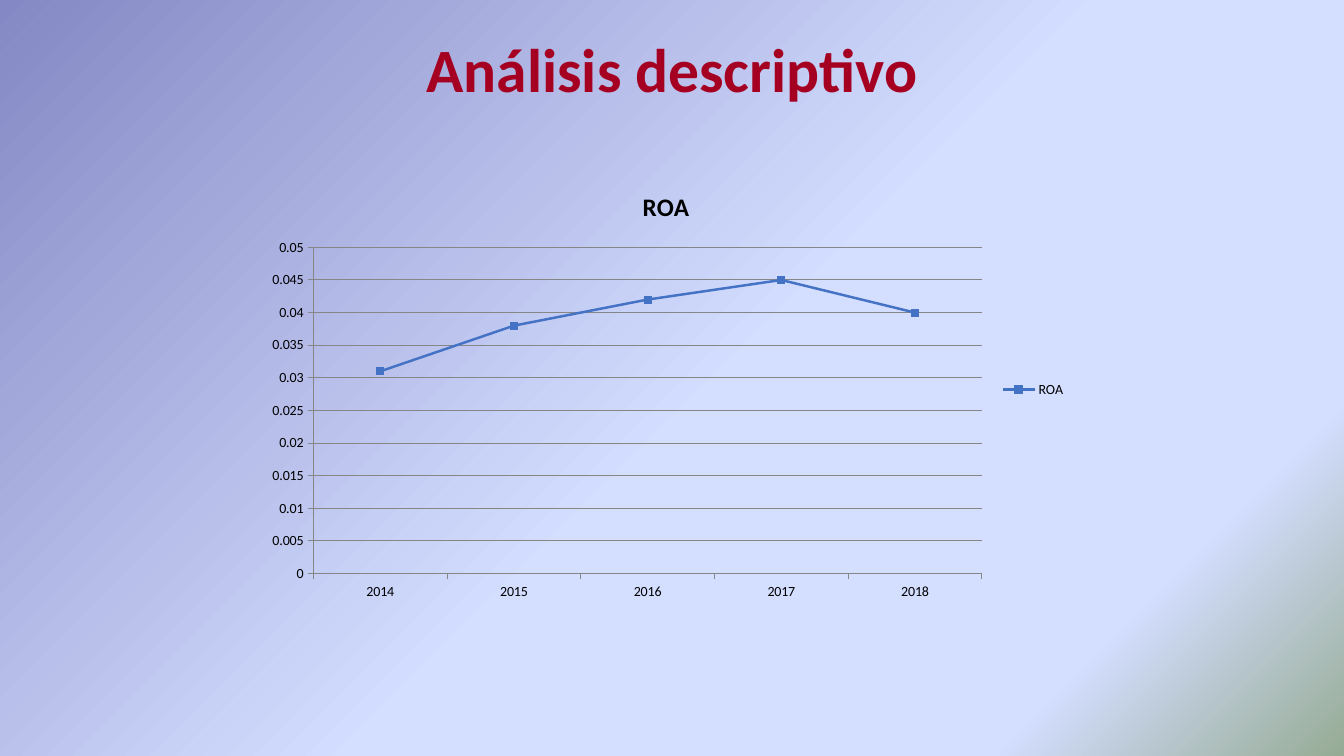
from dataclasses import dataclass

from lxml.etree import SubElement
from pptx import Presentation
from pptx.chart.data import CategoryChartData
from pptx.dml.color import RGBColor
from pptx.enum.chart import XL_CHART_TYPE as ChartType
from pptx.enum.chart import XL_LEGEND_POSITION as LegendPosition
from pptx.enum.chart import XL_MARKER_STYLE as MarkerStyle
from pptx.enum.chart import XL_TICK_MARK as TickMark
from pptx.enum.text import MSO_ANCHOR as Anchor
from pptx.enum.text import PP_ALIGN as Align
from pptx.oxml.ns import qn
from pptx.util import Pt

PX = 12192000 / 1344  # EMU in one pixel


@dataclass(frozen=True)
class Theme:
    font: str = "Calibri"
    heading: str = "A50021"
    text: str = "000000"
    series: str = "4472C4"
    grid: str = "868686"
    heading_size: int = 44
    chart_title_size: int = 18
    label_size: int = 10
    backdrop: tuple = ((0, "8488C4"), (53, "D4DEFF"), (83, "D4DEFF"), (100, "96AB94"))


THEME = Theme()


def px(*lengths):
    return [round(length * PX) for length in lengths]


def format_font(font, size, color=THEME.text, bold=False):
    font.name = THEME.font
    font.size = Pt(size)
    font.bold = bold
    font.color.rgb = RGBColor.from_string(color)


def write_text(frame, text, align=Align.CENTER, spacing=None, **style):
    paragraph = frame.paragraphs[0]
    paragraph.alignment = align
    paragraph.line_spacing = spacing
    run = paragraph.add_run()
    run.text = text
    format_font(run.font, **style)


def paint_backdrop(slide):
    fill = slide.background.fill
    fill.gradient()
    fill.gradient_angle = 315
    stops = slide.element.find(".//" + qn("a:gsLst"))
    for stop in list(stops):
        stops.remove(stop)
    for percent, color in THEME.backdrop:
        stop = SubElement(stops, qn("a:gs"), pos=str(percent * 1000))
        SubElement(stop, qn("a:srgbClr"), val=color)


def place_heading(slide, box, text):
    heading = slide.shapes.title
    heading.left, heading.top, heading.width, heading.height = px(*box)
    heading.text_frame.vertical_anchor = Anchor.MIDDLE
    write_text(heading.text_frame, text, spacing=0.9, size=THEME.heading_size,
               color=THEME.heading, bold=True)


def style_line(line, color, width):
    line.color.rgb = RGBColor.from_string(color)
    line.width = Pt(width)


def place_roa_chart(slide, box, returns):
    data = CategoryChartData(number_format="General")
    data.categories = list(returns)
    data.add_series("ROA", list(returns.values()))
    chart = slide.shapes.add_chart(ChartType.LINE_MARKERS, *px(*box), data).chart
    format_font(chart.font, THEME.label_size)

    # Title and legend
    chart.has_title = True
    write_text(chart.chart_title.text_frame, "ROA", size=THEME.chart_title_size, bold=True)
    chart.chart_title.include_in_layout = False
    chart.has_legend = True
    chart.legend.position = LegendPosition.RIGHT
    chart.legend.include_in_layout = False

    # Axes and gridlines
    for axis in (chart.category_axis, chart.value_axis):
        axis.major_tick_mark = TickMark.OUTSIDE
        axis.minor_tick_mark = TickMark.NONE
        style_line(axis.format.line, THEME.grid, 0.75)
    returns_axis = chart.value_axis
    returns_axis.minimum_scale = 0
    returns_axis.maximum_scale = 0.05
    returns_axis.major_unit = 0.005
    returns_axis.has_major_gridlines = True
    style_line(returns_axis.major_gridlines.format.line, THEME.grid, 0.75)

    # Line and markers
    chart.plots[0].vary_by_categories = False
    roa = chart.plots[0].series[0]
    roa.smooth = False
    style_line(roa.format.line, THEME.series, 1.75)
    roa.marker.style = MarkerStyle.SQUARE
    roa.marker.size = 5
    roa.marker.format.fill.solid()
    roa.marker.format.fill.fore_color.rgb = RGBColor.from_string(THEME.series)
    style_line(roa.marker.format.line, THEME.series, 0.75)


def main():
    deck = Presentation()
    deck.slide_width, deck.slide_height = px(1344, 756)
    slide = deck.slides.add_slide(deck.slide_layouts[5])
    paint_backdrop(slide)
    place_heading(slide, (93, 0, 1159, 146), "Análisis descriptivo")
    place_roa_chart(slide, (256, 171, 820, 437), {
        "2014": 0.031, "2015": 0.038, "2016": 0.042, "2017": 0.045, "2018": 0.04,
    })
    deck.save("out.pptx")


if __name__ == "__main__":
    main()
